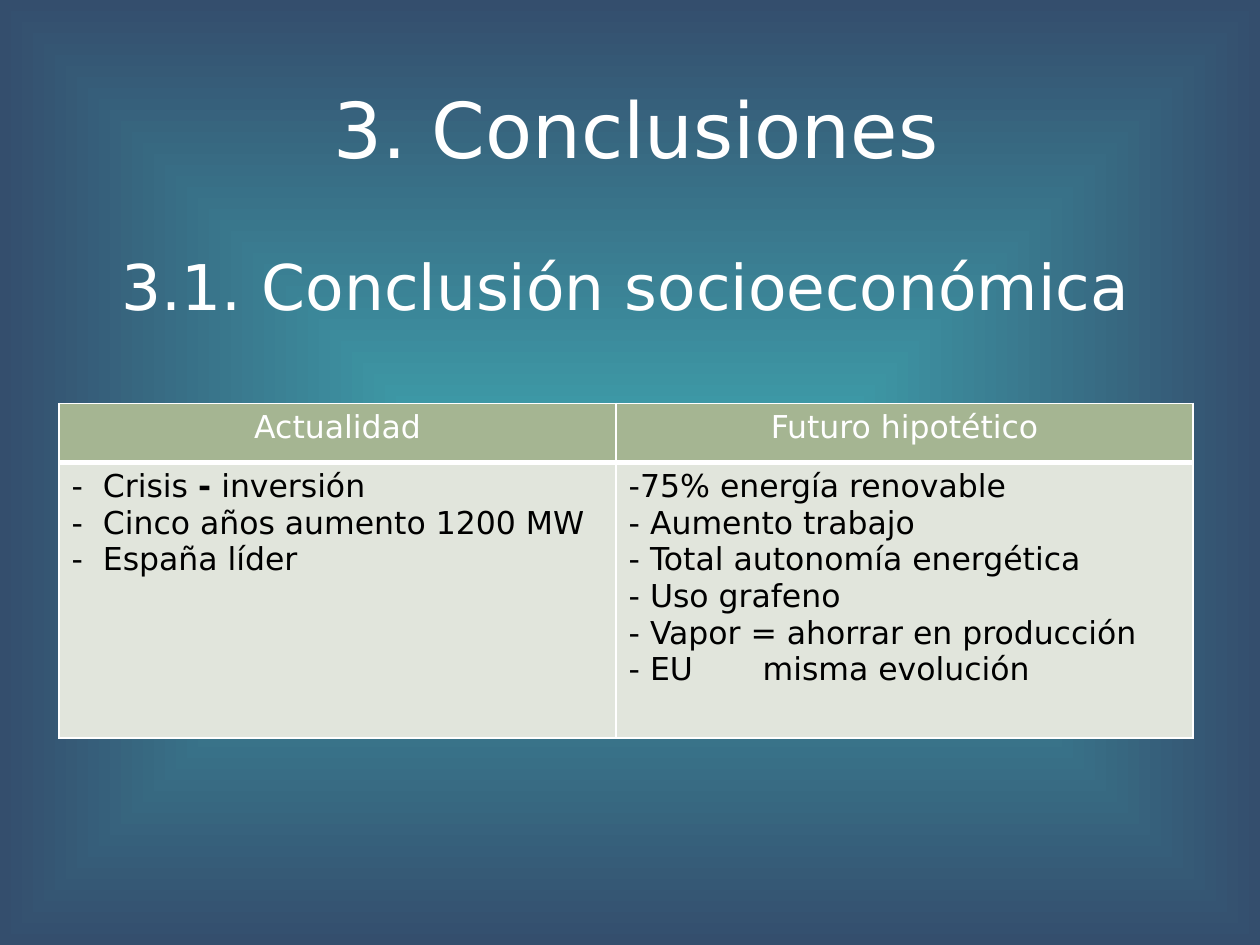
from dataclasses import dataclass

from pptx import Presentation
from pptx.dml.color import RGBColor
from pptx.enum import text
from pptx.oxml import parse_xml
from pptx.oxml import ns
from pptx.util import Cm, Pt


@dataclass(frozen=True)
class Theme:
    font: str = "DejaVu Sans"
    white: str = "FFFFFF"
    black: str = "000000"
    header: str = "A5B592"
    body: str = "E1E5DC"
    glow: str = "3FA4AF"
    edge: str = "344E6D"
    title_size: int = 44
    subtitle_size: int = 36
    table_size: int = 18


T = Theme()

HEADERS = ["Actualidad", "Futuro hipotético"]
# Each line is a list of (words, bold) pieces
PRESENT = [
    [("-\tCrisis ", False), ("-", True), (" inversión", False)],
    [("-\tCinco años aumento 1200 MW", False)],
    [("-\tEspaña líder", False)],
]
FUTURE = [[(line, False)] for line in (
    "-75% energía renovable",
    "- Aumento trabajo",
    "- Total autonomía energética",
    "- Uso grafeno",
    "- Vapor = ahorrar en producción",
    "- EU\tmisma evolución",
)]


def set_background(s):
    """Gradient glowing from the centre of the slide."""
    s.element.cSld.insert(0, parse_xml(
        f'<p:bg {ns.nsdecls("p", "a")}><p:bgPr><a:gradFill rotWithShape="1"><a:gsLst>'
        f'<a:gs pos="0"><a:srgbClr val="{T.glow}"/></a:gs>'
        f'<a:gs pos="100000"><a:srgbClr val="{T.edge}"/></a:gs></a:gsLst>'
        '<a:path path="rect"><a:fillToRect l="50000" t="50000" r="50000" b="50000"/></a:path>'
        '</a:gradFill><a:effectLst/></p:bgPr></p:bg>'))


def add_run(p, words, size, color, bold=False):
    r = p.add_run()
    r.text = words
    for name, value in {"name": T.font, "size": Pt(size), "bold": bold}.items():
        setattr(r.font, name, value)
    r.font.color.rgb = RGBColor.from_string(color)


def format_heading(sp, words, size, left, top):
    box = {"left": Cm(left), "top": Cm(top), "width": Cm(22.86), "height": Cm(3.18)}
    for name, value in box.items():
        setattr(sp, name, value)
    tf = sp.text_frame
    frame = {"word_wrap": True, "auto_size": text.MSO_AUTO_SIZE.NONE,
             "vertical_anchor": text.MSO_ANCHOR.MIDDLE}
    for name, value in frame.items():
        setattr(tf, name, value)
    p = tf.paragraphs[0]
    p.alignment = text.PP_ALIGN.CENTER
    add_run(p, words, size, T.white)


def set_tab(p, position):
    p._p.get_or_add_pPr().append(parse_xml(
        f'<a:tabLst {ns.nsdecls("a")}><a:tab pos="{Cm(position)}" algn="l"/></a:tabLst>'))


def format_cell(cell, fill, bottom=1):
    """White borders, then the fill, in the order the schema needs."""
    tc_pr = cell._tc.get_or_add_tcPr()
    for side, width in {"L": 1, "R": 1, "T": 1, "B": bottom}.items():
        tc_pr.append(parse_xml(
            f'<a:ln{side} {ns.nsdecls("a")} w="{Pt(width)}"><a:solidFill>'
            f'<a:srgbClr val="{T.white}"/></a:solidFill></a:ln{side}>'))
    cell.fill.solid()
    cell.fill.fore_color.rgb = RGBColor.from_string(fill)


def fill_lines(cell, lines, tab):
    tf = cell.text_frame
    for i, pieces in enumerate(lines):
        p = tf.add_paragraph() if i else tf.paragraphs[0]
        set_tab(p, tab)
        for words, bold in pieces:
            add_run(p, words, T.table_size, T.black, bold)


def add_comparison(s):
    widths, heights = [11.23, 11.63], [1.19, 5.56]
    table = s.shapes.add_table(2, 2, Cm(1.19), Cm(8.13),
                               Cm(sum(widths)), Cm(sum(heights))).table
    for column, width in zip(table.columns, widths):
        column.width = Cm(width)
    for row, height in zip(table.rows, heights):
        row.height = Cm(height)

    # Header row
    for i, words in enumerate(HEADERS):
        cell = table.cell(0, i)
        format_cell(cell, T.header, bottom=3)
        p = cell.text_frame.paragraphs[0]
        p.alignment = text.PP_ALIGN.CENTER
        add_run(p, words, T.table_size, T.white)

    # Body row
    for i, (lines, tab) in enumerate([(PRESENT, 0.63), (FUTURE, 2.7)]):
        cell = table.cell(1, i)
        format_cell(cell, T.body)
        cell._tc.tcPr.find(ns.qn("a:lnT")).set("w", str(Pt(3)))
        fill_lines(cell, lines, tab)


def main():
    prs = Presentation()
    prs.slide_width, prs.slide_height = Cm(25.4), Cm(19.05)
    s = prs.slides.add_slide(prs.slide_layouts[5])
    set_background(s)

    # Headings
    format_heading(s.shapes.title, "3. Conclusiones", T.title_size, 1.4, 0.99)
    subtitle = s.shapes.add_textbox(0, 0, 0, 0)
    format_heading(subtitle, "3.1. Conclusión socioeconómica", T.subtitle_size, 1.19, 4.17)

    # Today against the hypothetical future
    add_comparison(s)
    prs.save("out.pptx")


if __name__ == "__main__":
    main()
